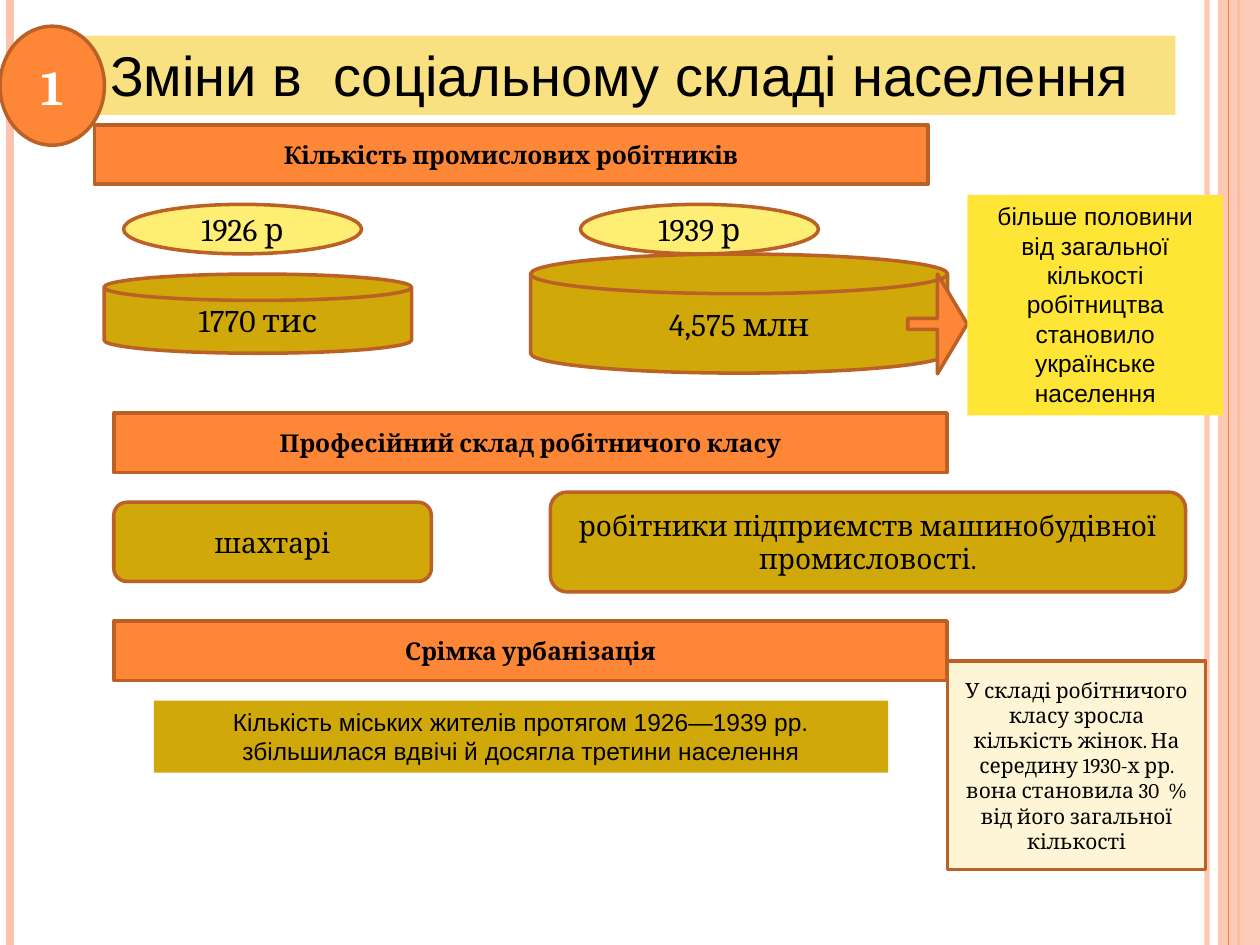
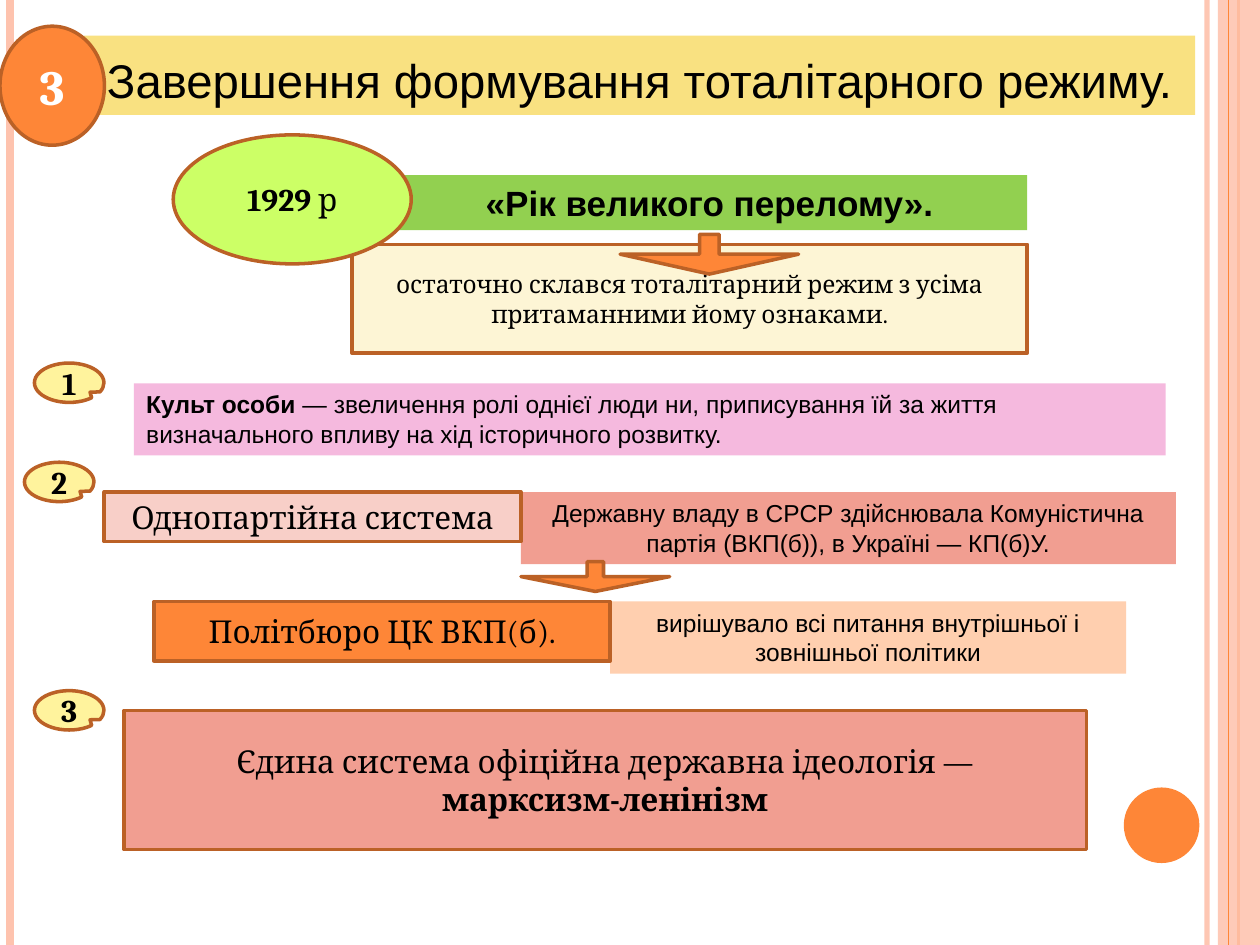
from lxml import etree
from pptx import Presentation
from pptx.dml.color import RGBColor
from pptx.enum.shapes import MSO_CONNECTOR, MSO_SHAPE
from pptx.enum.text import MSO_ANCHOR, PP_ALIGN
from pptx.oxml.ns import qn
from pptx.util import Pt

RECT, OVAL, ROUND = MSO_SHAPE.RECTANGLE, MSO_SHAPE.OVAL, MSO_SHAPE.ROUNDED_RECTANGLE
DISK, CALLOUT = MSO_SHAPE.FLOWCHART_MAGNETIC_DISK, MSO_SHAPE.OVAL_CALLOUT
RIGHT_ARROW, DOWN_ARROW = MSO_SHAPE.RIGHT_ARROW, MSO_SHAPE.DOWN_ARROW
STRAIGHT = MSO_CONNECTOR.STRAIGHT
TOP, MIDDLE, BOTTOM = MSO_ANCHOR.TOP, MSO_ANCHOR.MIDDLE, MSO_ANCHOR.BOTTOM
LEFT, CENTER = PP_ALIGN.LEFT, PP_ALIGN.CENTER

WIDTH, HEIGHT = 720, 540
SANS, SERIF = "Arial", "Cambria"
BLACK, WHITE = "000000", "FFFFFF"
ORANGE, RUST, PEACH = "FE8637", "BB6126", "FEC3AE"
GOLD, CREAM, SALMON = "D0A80A", "FDF5D5", "F19E91"
TITLE_FILL, YEAR_FILL, NUMBER_FILL = "F9E181", "FFEE74", "FFF39D"


def rgb(color):
    return RGBColor.from_string(color)


def set_alpha(sp_pr, percent):
    """Make the first solid colour of a shape partly transparent."""
    color = next(sp_pr.iter(qn("a:srgbClr")))
    etree.SubElement(color, qn("a:alpha")).set("val", str(percent * 1000))


class Deck:
    """Holds the style and the slide being built."""

    def __init__(self):
        self.prs = Presentation()
        self.prs.slide_width, self.prs.slide_height = Pt(WIDTH), Pt(HEIGHT)
        self.s = None

    def new_slide(self):
        self.s = self.prs.slides.add_slide(self.prs.slide_layouts[6])
        # Side stripes
        self.stripe(689.8, PEACH, 3, alpha=93)
        self.stripe(5.8, PEACH, 4.5)
        self.stripe(707.8, ORANGE, 1.5)
        band = self.shape(RECT, 696, 0, 24, HEIGHT, PEACH, line=None)
        set_alpha(band._element.spPr, 87)
        self.stripe(702, ORANGE, 0.75)

    def stripe(self, x, color, width, alpha=None):
        line = self.s.shapes.add_connector(STRAIGHT, Pt(x), Pt(0), Pt(x), Pt(HEIGHT))
        line.line.color.rgb = rgb(color)
        line.line.width = Pt(width)
        sp_pr = line._element.spPr
        if alpha:
            set_alpha(sp_pr, alpha)
        etree.SubElement(sp_pr, qn("a:effectLst"))

    def shape(self, kind, x, y, w, h, fill, line=RUST, adj=()):
        sp = self.s.shapes.add_shape(kind, Pt(x), Pt(y), Pt(w), Pt(h))
        sp.shadow.inherit = False
        for i, value in enumerate(adj):
            sp.adjustments[i] = value
        sp.fill.solid()
        sp.fill.fore_color.rgb = rgb(fill)
        if line:
            sp.line.color.rgb = rgb(line)
            sp.line.width = Pt(2)
        else:
            sp.line.fill.background()
        return sp

    def set_text(self, sp, text, size, font=SERIF, color=BLACK, bold=False,
                 anchor=MIDDLE, align=CENTER, spacing=None):
        """Text is a string, or a list of paragraphs made of (text, bold) runs."""
        paragraphs = [[(text, bold)]] if isinstance(text, str) else text
        tf = sp.text_frame
        tf.word_wrap = True
        tf.vertical_anchor = anchor
        for i, runs in enumerate(paragraphs):
            p = tf.paragraphs[0] if i == 0 else tf.add_paragraph()
            p.alignment = align
            if spacing:
                p.line_spacing = spacing
            for run_text, run_bold in runs:
                r = p.add_run()
                r.text = run_text
                r.font.name, r.font.size, r.font.bold = font, Pt(size), run_bold
                r.font.color.rgb = rgb(color)

    def box(self, kind, x, y, w, h, fill, text, size, bold=False, adj=()):
        """Outlined shape with centred serif text."""
        sp = self.shape(kind, x, y, w, h, fill, adj=adj)
        self.set_text(sp, text, size, bold=bold)

    def note(self, x, y, w, h, fill, text, size=14, bold=False, align=CENTER):
        """Filled text box without an outline."""
        sp = self.s.shapes.add_textbox(Pt(x), Pt(y), Pt(w), Pt(h))
        sp.fill.solid()
        sp.fill.fore_color.rgb = rgb(fill)
        self.set_text(sp, text, size, SANS, bold=bold, anchor=TOP, align=align)

    def title(self, x, text, size):
        sp = self.shape(RECT, x, 20.4, 635, 45.2, TITLE_FILL, line=None)
        self.set_text(sp, text, size, SANS, anchor=BOTTOM, spacing=0.9)

    def badge(self, number):
        sp = self.shape(OVAL, 0, 15, 59.7, 68, ORANGE)
        self.set_text(sp, number, 28, color=WHITE, bold=True)

    def heading(self, x, y, text):
        self.box(RECT, x, y, 476.2, 34, ORANGE, text, 14, bold=True)

    def number(self, x, y, text):
        self.box(CALLOUT, x, y, 39.7, 22.5, NUMBER_FILL, text, 18, bold=True,
                 adj=(0.3, 0.24))

    def arrow(self, kind, x, y, w, h):
        self.shape(kind, x, y, w, h, ORANGE, adj=(0.11, 0.5))


def social_changes(d):
    d.new_slide()
    d.title(36.7, "Зміни в  соціальному складі населення", 32)

    # Number of industrial workers
    d.heading(54, 71.3, "Кількість промислових робітників")
    for x, year in ((70.6, "1926 р"), (331.7, "1939 р")):
        d.box(OVAL, x, 116.8, 136, 28.3, YEAR_FILL, year, 18)
    d.box(DISK, 59.5, 156.6, 175.7, 45.3, GOLD, "1770 тис", 18)
    d.box(DISK, 303.2, 145.2, 238.3, 68, GOLD, "4,575 млн", 18)
    d.arrow(RIGHT_ARROW, 518.7, 156.6, 34, 57)
    d.note(552.8, 111.4, 146.2, 126, "FFE636",
           "більше половини від загальної кількості робітництва становило "
           "українське населення")

    # Trades
    d.heading(65, 236, "Професійний склад робітничого класу")
    d.box(ROUND, 314.5, 281.2, 363, 57, GOLD,
          "робітники підприємств машинобудівної промисловості.", 16)
    d.box(ROUND, 65, 287, 181.5, 45.3, GOLD, "шахтарі", 16)

    # Urbanisation
    d.heading(65, 354.8, "Срімка урбанізація")
    d.note(88, 400.3, 419.5, 41.2, GOLD,
           "Кількість міських жителів протягом 1926—1939 рр. збільшилася "
           "вдвічі й досягла третини населення")
    d.box(RECT, 541.5, 377.8, 147.5, 119, CREAM,
          "У складі робітничого класу зросла кількість жінок. На середину "
          "1930-х рр. вона становила 30  % від його загальної кількості", 12)
    d.badge("1")


def totalitarian_regime(d):
    d.new_slide()
    d.shape(OVAL, 642.2, 450, 43.2, 43.2, ORANGE, line=None)
    d.title(48, "Завершення формування тоталітарного режиму.", 27)

    # Turning point
    d.note(224, 100, 363, 31.5, "92D050", "«Рік великого перелому».", 20, bold=True)
    d.box(RECT, 201.2, 139.6, 385.8, 62.3, CREAM,
          "остаточно склався тоталітарний режим з усіма притаманними йому "
          "ознаками.", 14)
    d.badge("3")
    d.box(OVAL, 99, 77.1, 136, 73.7, "CCFF66", [[("1929", True), (" р", False)]], 18)
    d.arrow(DOWN_ARROW, 354.4, 133.9, 102, 22.7)

    # One-party system
    d.note(297.7, 281.2, 374.2, 41.2, SALMON,
           "Державну владу в СРСР здійснювала Комуністична партія (ВКП(б)), "
           "в Україні — КП(б)У.")
    d.note(348.7, 343.7, 294.8, 41.2, "FFCFAF",
           "вирішувало всі питання внутрішньої і зовнішньої політики")
    d.box(RECT, 88, 343.7, 260.7, 34, ORANGE, "Політбюро ЦК ВКП(б).", 18)
    d.box(RECT, 59.5, 281.2, 238.2, 28.3, "F8CFC8", "Однопартійна система", 18)
    d.arrow(DOWN_ARROW, 297.7, 321, 85, 17)
    d.number(14, 264.2, "2")

    # Personality cult
    d.note(76.5, 219, 589.6, 41.2, "F5B9DE",
           [[("Культ особи ", True),
             ("— звеличення ролі однієї люди ни, приписування їй за життя "
              "визначального впливу на хід історичного розвитку.", False)]],
           align=LEFT)
    d.number(19.7, 207.5, "1")

    # Single ideology
    d.box(RECT, 70.8, 406, 550, 79.4, SALMON,
          [[("Єдина система офіційна державна ідеологія —", False)],
           [("марксизм-ленінізм", True)]], 18)
    d.number(19.7, 394.7, "3")


def main():
    deck = Deck()
    social_changes(deck)
    totalitarian_regime(deck)
    deck.prs.save("out.pptx")


if __name__ == "__main__":
    main()
